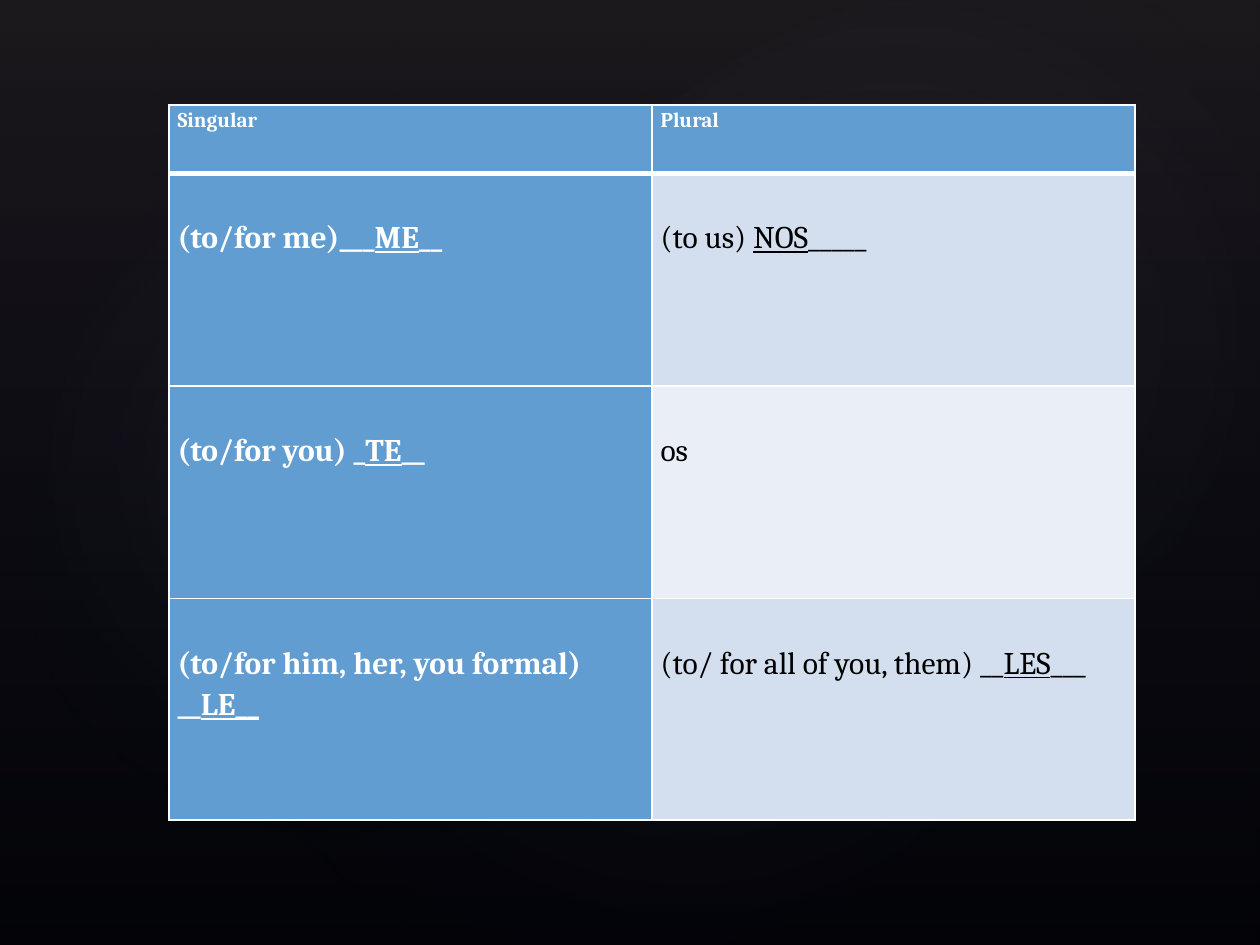
from lxml import etree
from pptx import Presentation
from pptx.dml.color import RGBColor
from pptx.enum.shapes import MSO_SHAPE
from pptx.oxml import parse_xml
from pptx.oxml.ns import qn
from pptx.util import Pt

RECT = MSO_SHAPE.RECTANGLE
OVAL = MSO_SHAPE.OVAL
BLANK = 6

BLACK = RGBColor(0x00, 0x00, 0x00)
WHITE = RGBColor(0xFF, 0xFF, 0xFF)
PLUM = RGBColor(0x50, 0x46, 0x52)
NAVY = RGBColor(0x24, 0x28, 0x52)
MAUVE = RGBColor(0xC4, 0xBC, 0xC6)
BLUE = RGBColor(0x62, 0x9D, 0xD1)
BAND = RGBColor(0xD3, 0xDF, 0xEE)
PALE = RGBColor(0xEA, 0xEF, 0xF7)

DRAW = "http://schemas.openxmlformats.org/drawingml/2006/main"
DOWN = '<a:lin ang="5400000" scaled="0"/>'
ROUND = ('<a:path path="circle"><a:fillToRect l="50000" t="50000" '
         'r="50000" b="50000"/></a:path>')


def add_glow(kind, box, turn, stops, mode):
    shape = slide.shapes.add_shape(kind, *[Pt(n) for n in box])
    shape.rotation = turn
    shape.shadow.inherit = False
    shape.line.fill.background()
    marks = "".join(
        f'<a:gs pos="{pos * 1000}"><a:srgbClr val="{tint}">'
        f'<a:alpha val="{alpha * 1000}"/></a:srgbClr></a:gs>'
        for pos, tint, alpha in stops)
    grad = parse_xml(f'<a:gradFill xmlns:a="{DRAW}" rotWithShape="1">'
                     f'<a:gsLst>{marks}</a:gsLst>{mode}</a:gradFill>')
    shape.element.spPr.find(qn("a:prstGeom")).addnext(grad)


def add_edge(cell, side, width):
    edge = etree.SubElement(cell._tc.get_or_add_tcPr(), qn(f"a:ln{side}"), w=str(Pt(width)))
    fill = etree.SubElement(edge, qn("a:solidFill"))
    etree.SubElement(fill, qn("a:srgbClr"), val=str(WHITE))


deck = Presentation()
deck.slide_width, deck.slide_height = Pt(720), Pt(540)
slide = deck.slides.add_slide(deck.slide_layouts[BLANK])
back = slide.background.fill
back.solid()
back.fore_color.rgb = BLACK

add_glow(RECT, (0, 0, 720, 540), 0, [(0, PLUM, 36), (100, NAVY, 10)], DOWN)
glows = [
    ((108, 82, 570, 449), 328.7, 7),
    ((-21.5, 92, 436, 353), 294.3, 8),
    ((258, 9.5, 510.5, 374.5), 328.7, 8),
]
for box, turn, alpha in glows:
    add_glow(OVAL, box, turn, [(0, MAUVE, alpha), (58, NAVY, 0)], ROUND)

rows = [
    (39, [("Singular",), ("Plural",)]),
    (121.5, [("(to/for me)___", "ME", "__"), ("(to us) ", "NOS", "_____")]),
    (121.5, [("(to/for you) _", "TE", "__"), ("os",)]),
    (126.5, [("(to/for him, her, you formal) __", "LE__"),
             ("(to/ for all of you, them) __", "LES", "___")]),
]
high = sum(row[0] for row in rows)
table = slide.shapes.add_table(4, 2, Pt(96.5), Pt(60), Pt(552), Pt(high)).table
for col in table.columns:
    col.width = Pt(276)

for r, (tall, texts) in enumerate(rows):
    table.rows[r].height = Pt(tall)
    for c, parts in enumerate(texts):
        cell = table.cell(r, c)
        head = r == 0
        dark = head or c == 0
        cell.margin_left = cell.margin_right = Pt(5)
        cell.margin_top = Pt(0 if head else 24)
        cell.margin_bottom = Pt(0)
        for side in "LRTB":
            thick = (r, side) in ((0, "B"), (1, "T"))
            add_edge(cell, side, 3 if thick else 1)
        cell.fill.solid()
        cell.fill.fore_color.rgb = BLUE if dark else BAND if r % 2 else PALE
        para = cell.text_frame.paragraphs[0]
        para.line_spacing = 1.15
        for i, part in enumerate(parts):
            run = para.add_run()
            run.text = part
            font = run.font
            font.name = "Cambria"
            font.size = Pt(12 if head else 18)
            font.bold = dark
            font.underline = i == 1
            font.color.rgb = WHITE if dark else BLACK

deck.save("out.pptx")
